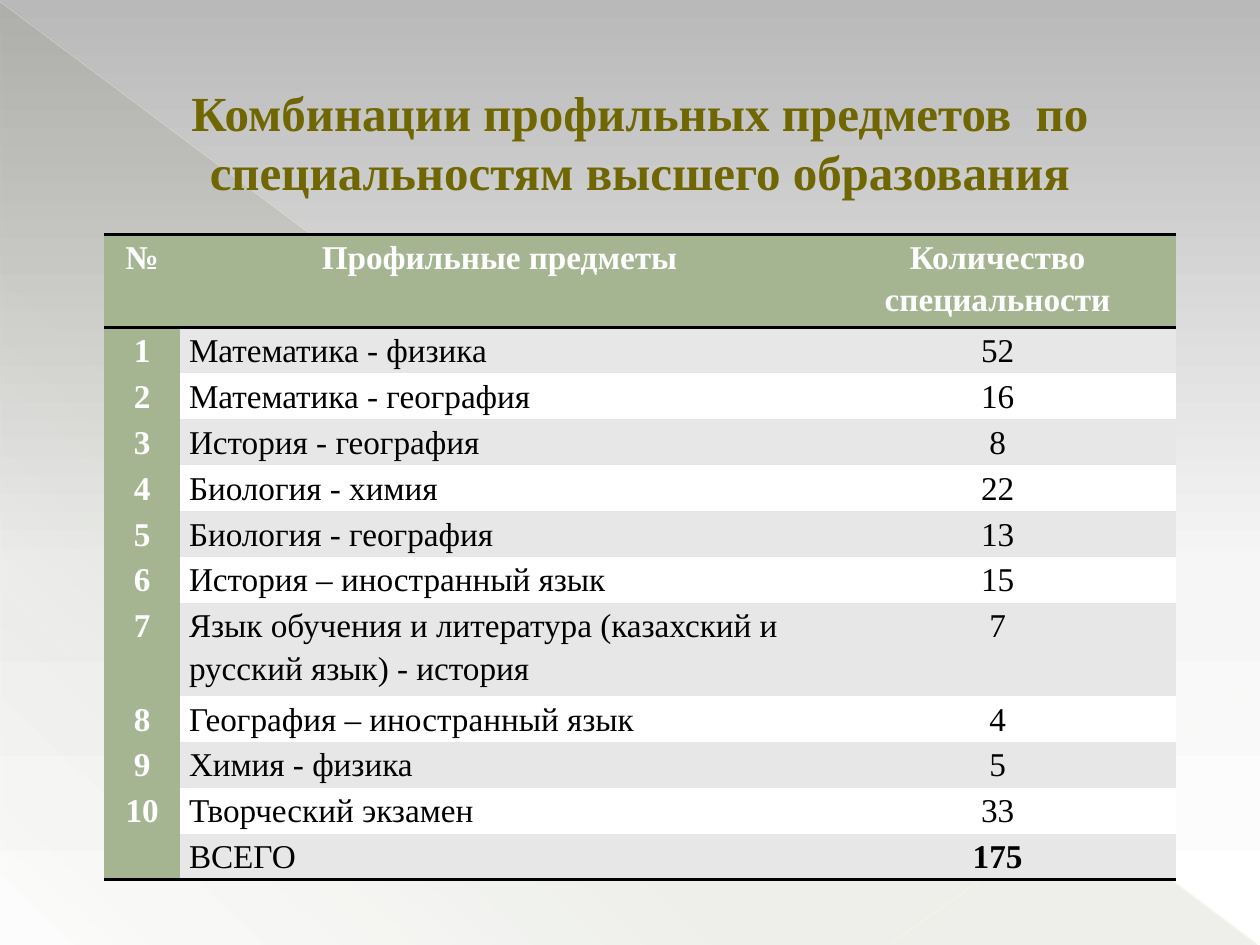
from lxml import etree
from pptx import Presentation
from pptx.dml.color import RGBColor
from pptx.enum.shapes import MSO_CONNECTOR, MSO_SHAPE
from pptx.enum.text import MSO_ANCHOR, PP_ALIGN
from pptx.oxml.ns import qn
from pptx.util import Cm, Pt

LEFT, CENTER = PP_ALIGN.LEFT, PP_ALIGN.CENTER
MIDDLE = MSO_ANCHOR.MIDDLE
STRAIGHT = MSO_CONNECTOR.STRAIGHT
RIGHT_TRIANGLE = MSO_SHAPE.RIGHT_TRIANGLE

FONT = "Times New Roman"
OLIVE = RGBColor(0x70, 0x67, 0x02)
GREEN = RGBColor(0xA5, 0xB5, 0x92)
GRAY = RGBColor(0xE7, 0xE7, 0xE7)
WHITE = RGBColor(0xFF, 0xFF, 0xFF)
BLACK = RGBColor(0x00, 0x00, 0x00)
DARK_GREEN = RGBColor(0x44, 0x4D, 0x26)
CREAM = RGBColor(0xFF, 0xFD, 0xE3)
SKY_TOP = RGBColor(0xB9, 0xB9, 0xB9)
SKY_MIDDLE = RGBColor(0xF6, 0xF6, 0xF6)
NO_STYLE = "{2D5ABB26-0587-4C30-8999-92F81FD0307C}"

TITLE = "Комбинации профильных предметов  по специальностям высшего образования"
HEADER = ("№", "Профильные предметы", "Количество специальности")
SUBJECTS = [
    ("Математика - физика", 52),
    ("Математика - география", 16),
    ("История - география", 8),
    ("Биология - химия", 22),
    ("Биология - география", 13),
    ("История – иностранный язык", 15),
    ("Язык обучения и литература (казахский и русский язык) - история", 7),
    ("География – иностранный язык", 4),
    ("Химия - физика", 5),
    ("Творческий экзамен", 33),
]
TOTAL = ("", "ВСЕГО", "175")
ROWS = [
    HEADER,
    *((str(n), name, str(count)) for n, (name, count) in enumerate(SUBJECTS, 1)),
    TOTAL,
]
COLUMN_WIDTHS = (Cm(1.53), Cm(12.88), Cm(7.2))
ROW_HEIGHT, TALL_ROW_HEIGHT = Cm(0.92), Cm(1.88)
TALL_ROWS = (0, 7)

# Decorative lines: start x, start y, end x, end y in cm, width in pt, opacity in %
RAYS = [(0, 0.03, 25.37, 19.02, 0.39, 35), (25.4, 13.74, 17.96, 19.02, 0.47, 45)]


def add_alpha(color_element, percent):
    etree.SubElement(color_element, qn("a:alpha"), val=str(percent * 1000))


def set_gradient(fill, owner, stops, angle):
    """Fill with (position %, colour, opacity %) stops; angle runs clockwise."""
    fill.gradient()
    gradient = owner.find(".//" + qn("a:gradFill"))
    for child in list(gradient):
        gradient.remove(child)
    stop_list = etree.SubElement(gradient, qn("a:gsLst"))
    for position, color, opacity in stops:
        stop = etree.SubElement(stop_list, qn("a:gs"), pos=str(position * 1000))
        add_alpha(etree.SubElement(stop, qn("a:srgbClr"), val=str(color)), opacity)
    etree.SubElement(gradient, qn("a:lin"), ang=str(angle * 60000), scaled="0")


def add_ray(slide, x1, y1, x2, y2, width, opacity):
    ray = slide.shapes.add_connector(STRAIGHT, Cm(x1), Cm(y1), Cm(x2), Cm(y2))
    ray.line.width = Pt(width)
    ray.line.color.rgb = CREAM
    properties = ray._element.spPr
    add_alpha(properties.find(".//" + qn("a:srgbClr")), opacity)
    etree.SubElement(properties, qn("a:effectLst"))


def set_text(frame, text, size, color, bold, align):
    frame.text = text
    paragraph = frame.paragraphs[0]
    paragraph.alignment = align
    font = paragraph.font
    font.name, font.size, font.bold = FONT, Pt(size), bold
    font.color.rgb = color
    return paragraph


def set_borders(cell, sides):
    """Draw black rules; the sides come in schema order, ahead of the fill."""
    for index, side in enumerate(sides):
        border = etree.Element(qn("a:" + side), w=str(Pt(2)))
        solid = etree.SubElement(border, qn("a:solidFill"))
        etree.SubElement(solid, qn("a:srgbClr"), val=str(BLACK))
        cell._tc.get_or_add_tcPr().insert(index, border)


def add_subject_table(slide):
    heights = [TALL_ROW_HEIGHT if r in TALL_ROWS else ROW_HEIGHT for r in range(len(ROWS))]
    table = slide.shapes.add_table(
        len(ROWS), len(HEADER), Cm(2.1), Cm(4.72), sum(COLUMN_WIDTHS), sum(heights)
    ).table
    table._tbl.tblPr.find(qn("a:tableStyleId")).text = NO_STYLE
    table.horz_banding = False
    for column, width in zip(table.columns, COLUMN_WIDTHS):
        column.width = width
    last = len(ROWS) - 1
    for r, (values, height) in enumerate(zip(ROWS, heights)):
        table.rows[r].height = height
        for c, value in enumerate(values):
            cell = table.cell(r, c)
            heading = r == 0 or c == 0
            cell.margin_left = cell.margin_right = Cm(0.18)
            cell.margin_top = cell.margin_bottom = 0
            cell.fill.solid()
            cell.fill.fore_color.rgb = GREEN if heading else GRAY if r % 2 else WHITE
            paragraph = set_text(
                cell.text_frame, value, 19,
                WHITE if heading else BLACK,
                heading or (r == last and c == 2),
                LEFT if c == 1 and not heading else CENTER,
            )
            paragraph.line_spacing = 1.15
            if r == 0:
                set_borders(cell, ("lnT", "lnB"))
            elif r == last:
                set_borders(cell, ("lnB",))


def main():
    deck = Presentation()
    deck.slide_width, deck.slide_height = Cm(25.4), Cm(19.05)
    slide = deck.slides.add_slide(deck.slide_layouts[6])
    set_gradient(
        slide.background.fill, slide._element,
        [(0, SKY_TOP, 100), (60, SKY_MIDDLE, 100), (100, WHITE, 100)], 90,
    )

    triangle = slide.shapes.add_shape(RIGHT_TRIANGLE, Cm(0.02), Cm(0.04), Cm(25.35), Cm(19))
    triangle.shadow.inherit = False
    triangle.line.fill.background()
    set_gradient(
        triangle.fill, triangle._element,
        [(0, DARK_GREEN, 10), (70, DARK_GREEN, 8), (100, DARK_GREEN, 1)], 133,
    )
    for ray in RAYS:
        add_ray(slide, *ray)

    title = slide.shapes.add_textbox(Cm(1.1), Cm(1.53), Cm(23.6), Cm(2.65)).text_frame
    title.word_wrap = True
    title.vertical_anchor = MIDDLE
    set_text(title, TITLE, 28, OLIVE, True, CENTER)

    add_subject_table(slide)
    deck.save("out.pptx")


if __name__ == "__main__":
    main()
